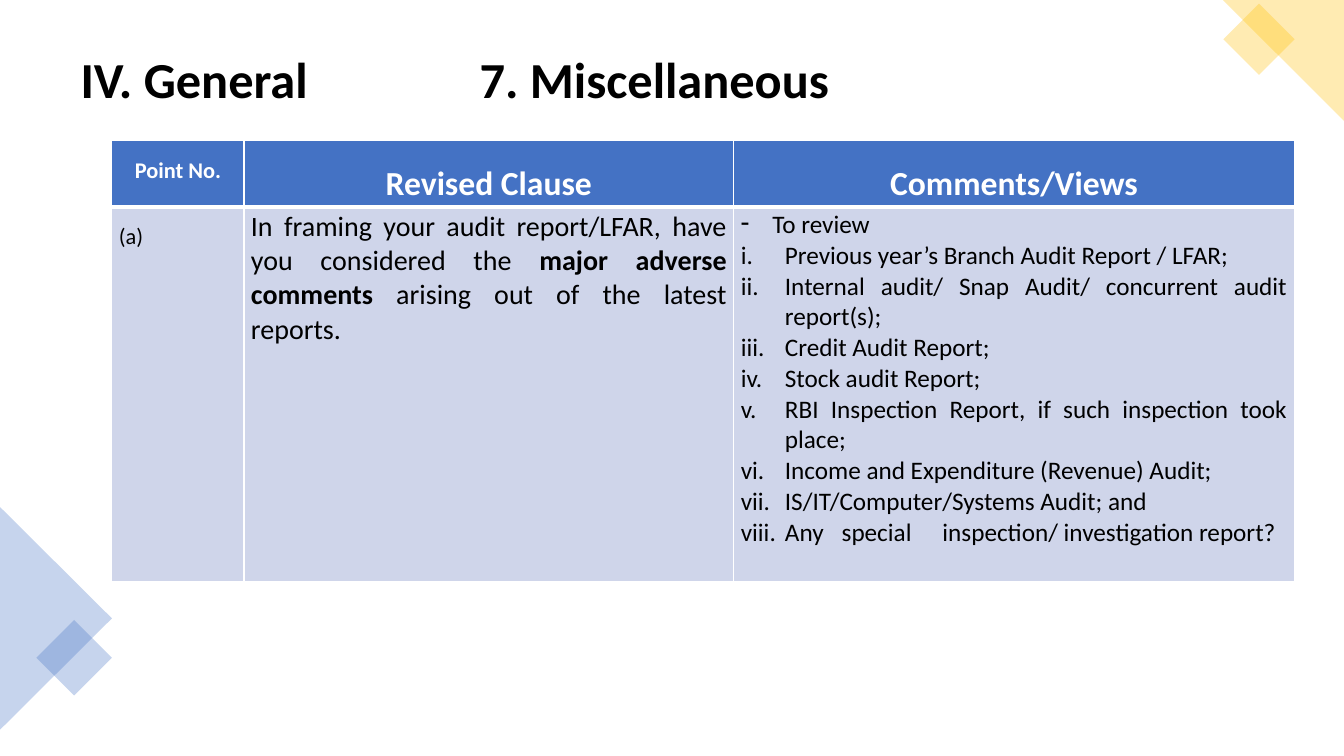
from dataclasses import dataclass

from lxml import etree
from pptx import Presentation
from pptx.dml.color import RGBColor
from pptx.enum.shapes import MSO_SHAPE
from pptx.enum.text import MSO_ANCHOR, PP_ALIGN
from pptx.oxml.ns import qn
from pptx.util import Emu, Inches, Pt

TRIANGLE, RECTANGLE = MSO_SHAPE.ISOSCELES_TRIANGLE, MSO_SHAPE.RECTANGLE
LEFT, CENTER, JUSTIFY = PP_ALIGN.LEFT, PP_ALIGN.CENTER, PP_ALIGN.JUSTIFY
MIDDLE = MSO_ANCHOR.MIDDLE

BLUE = RGBColor(0x44, 0x72, 0xC4)
GOLD = RGBColor(0xFF, 0xC0, 0x00)
PALE_BLUE = RGBColor(0xCF, 0xD5, 0xEA)
WHITE = RGBColor(0xFF, 0xFF, 0xFF)
BLACK = RGBColor(0x00, 0x00, 0x00)
FONT = "Calibri"

SLIDE_WIDTH, SLIDE_HEIGHT = Inches(13.33), Inches(7.5)
GRID_COLUMNS, GRID_ROWS = 160, 90
COLUMN_WIDTHS = (15.72, 58.32, 66.72)
HEADER_HEIGHT, BODY_HEIGHT = 7.92, 44.64


def across(columns: float) -> Emu:
    return Emu(round(SLIDE_WIDTH * columns / GRID_COLUMNS))


def down(rows: float) -> Emu:
    return Emu(round(SLIDE_HEIGHT * rows / GRID_ROWS))


@dataclass(frozen=True)
class Ornament:
    kind: int
    left: float
    top: float
    width: float
    height: float
    rotation: int
    color: RGBColor
    apex: float | None = None


@dataclass(frozen=True)
class Line:
    """One paragraph; every second piece of its text is bold."""
    pieces: tuple[str, ...]
    size: int
    align: int = JUSTIFY
    spacing: float = 1.0
    color: RGBColor = BLACK
    bold: bool = False
    bullet: tuple[str, str, str] | None = None
    indent: float = 0


ORNAMENTS = (
    Ornament(TRIANGLE, -6.6, 66.96, 26.52, 13.32, 90, BLUE, 0.5),
    Ornament(RECTANGLE, 5.64, 75.12, 6.36, 6.36, 45, BLUE),
    Ornament(TRIANGLE, 145.6, 0, 14.4, 14.4, 270, GOLD, 1),
    Ornament(RECTANGLE, 146.88, 1.68, 6, 6, 45, GOLD),
)
DASH = ("a:buChar", "char", "-")
ROMAN = ("a:buAutoNum", "type", "romanLcPeriod")
REPORTS = (
    "Previous year’s Branch Audit Report / LFAR;",
    "Internal audit/ Snap Audit/ concurrent audit report(s);",
    "Credit Audit Report;",
    "Stock audit Report;",
    "RBI Inspection Report, if such inspection took place;",
    "Income and Expenditure (Revenue) Audit;",
    "IS/IT/Computer/Systems Audit; and",
    "Any\tspecial\tinspection/ investigation report?",
)
HEADERS = (("Point No.", 16), ("Revised Clause", 24), ("Comments/Views", 24))
HEADER_CELLS = [
    [Line((text,), size, CENTER, 1.5, WHITE, True)] for text, size in HEADERS
]
BODY_CELLS = [
    [Line(("(a)",), 16, spacing=1.5)],
    [Line(("In framing your audit report/LFAR, have you considered the ",
           "major adverse comments",
           " arising out of the latest reports."), 20)],
    [Line(("To review",), 18, bullet=DASH, indent=3.75)]
    + [Line((report,), 18, bullet=ROMAN, indent=5.25) for report in REPORTS],
]


def write_line(paragraph, line: Line) -> None:
    paragraph.alignment = line.align
    paragraph.line_spacing = line.spacing
    font = paragraph.font
    font.name, font.size, font.bold = FONT, Pt(line.size), line.bold
    font.color.rgb = line.color
    for index, piece in enumerate(line.pieces):
        run = paragraph.add_run()
        run.text = piece
        if index % 2:
            run.font.bold = True
    if line.bullet:
        tag, attribute, value = line.bullet
        properties = paragraph._p.get_or_add_pPr()
        properties.set("marL", str(across(line.indent)))
        properties.set("indent", str(-across(line.indent)))
        bullet = etree.Element(qn(tag), {attribute: value})
        properties.find(qn("a:defRPr")).addprevious(bullet)


def add_ornament(slide, ornament: Ornament) -> None:
    shape = slide.shapes.add_shape(
        ornament.kind, across(ornament.left), down(ornament.top),
        across(ornament.width), down(ornament.height))
    shape.rotation = ornament.rotation
    if ornament.apex is not None:
        shape.adjustments[0] = ornament.apex
    shape.shadow.inherit = False
    shape.line.fill.background()
    shape.fill.solid()
    shape.fill.fore_color.rgb = ornament.color
    color = shape._element.spPr.find(f"{qn('a:solidFill')}/{qn('a:srgbClr')}")
    etree.SubElement(color, qn("a:alpha"), val="30000")


def add_title(slide) -> None:
    box = slide.shapes.add_textbox(across(8.4), down(4.2), across(140.8), down(11.2))
    frame = box.text_frame
    frame.word_wrap = True
    frame.vertical_anchor = MIDDLE
    paragraph = frame.paragraphs[0]
    title = Line(("IV. General\t7. Miscellaneous",), 36, LEFT, 0.9, bold=True)
    write_line(paragraph, title)
    tabs = etree.Element(qn("a:tabLst"))
    etree.SubElement(tabs, qn("a:tab"), pos=str(across(47.5)), algn="l")
    paragraph._p.pPr.find(qn("a:defRPr")).addprevious(tabs)


def add_borders(cell, top: int, bottom: int) -> None:
    """Draw white borders, with the top and bottom widths in points."""
    properties = cell._tc.get_or_add_tcPr()
    widths = {"a:lnL": 1, "a:lnR": 1, "a:lnT": top, "a:lnB": bottom}
    for index, (tag, width) in enumerate(widths.items()):
        border = etree.Element(qn(tag), w=str(Pt(width)))
        fill = etree.SubElement(border, qn("a:solidFill"))
        etree.SubElement(fill, qn("a:srgbClr"), val=str(WHITE))
        properties.insert(index, border)


def fill_cell(cell, lines: list[Line], color: RGBColor) -> None:
    cell.margin_left = cell.margin_right = Inches(0.07)
    cell.margin_top = cell.margin_bottom = Inches(0.03)
    cell.fill.solid()
    cell.fill.fore_color.rgb = color
    frame = cell.text_frame
    for index, line in enumerate(lines):
        paragraph = frame.add_paragraph() if index else frame.paragraphs[0]
        write_line(paragraph, line)


def add_clause_table(slide) -> None:
    table = slide.shapes.add_table(
        2, len(COLUMN_WIDTHS), across(13.32), down(16.68),
        across(sum(COLUMN_WIDTHS)), down(HEADER_HEIGHT + BODY_HEIGHT)).table
    table.horz_banding = False
    table.rows[0].height, table.rows[1].height = down(HEADER_HEIGHT), down(BODY_HEIGHT)
    for index, width in enumerate(COLUMN_WIDTHS):
        table.columns[index].width = across(width)
        header, body = table.cell(0, index), table.cell(1, index)
        fill_cell(header, HEADER_CELLS[index], BLUE)
        fill_cell(body, BODY_CELLS[index], PALE_BLUE)
        add_borders(header, top=1, bottom=3)
        add_borders(body, top=3, bottom=1)


def main() -> None:
    presentation = Presentation()
    presentation.slide_width, presentation.slide_height = SLIDE_WIDTH, SLIDE_HEIGHT
    slide = presentation.slides.add_slide(presentation.slide_layouts[6])
    add_title(slide)
    for ornament in ORNAMENTS:
        add_ornament(slide, ornament)
    add_clause_table(slide)
    presentation.save("out.pptx")


if __name__ == "__main__":
    main()
